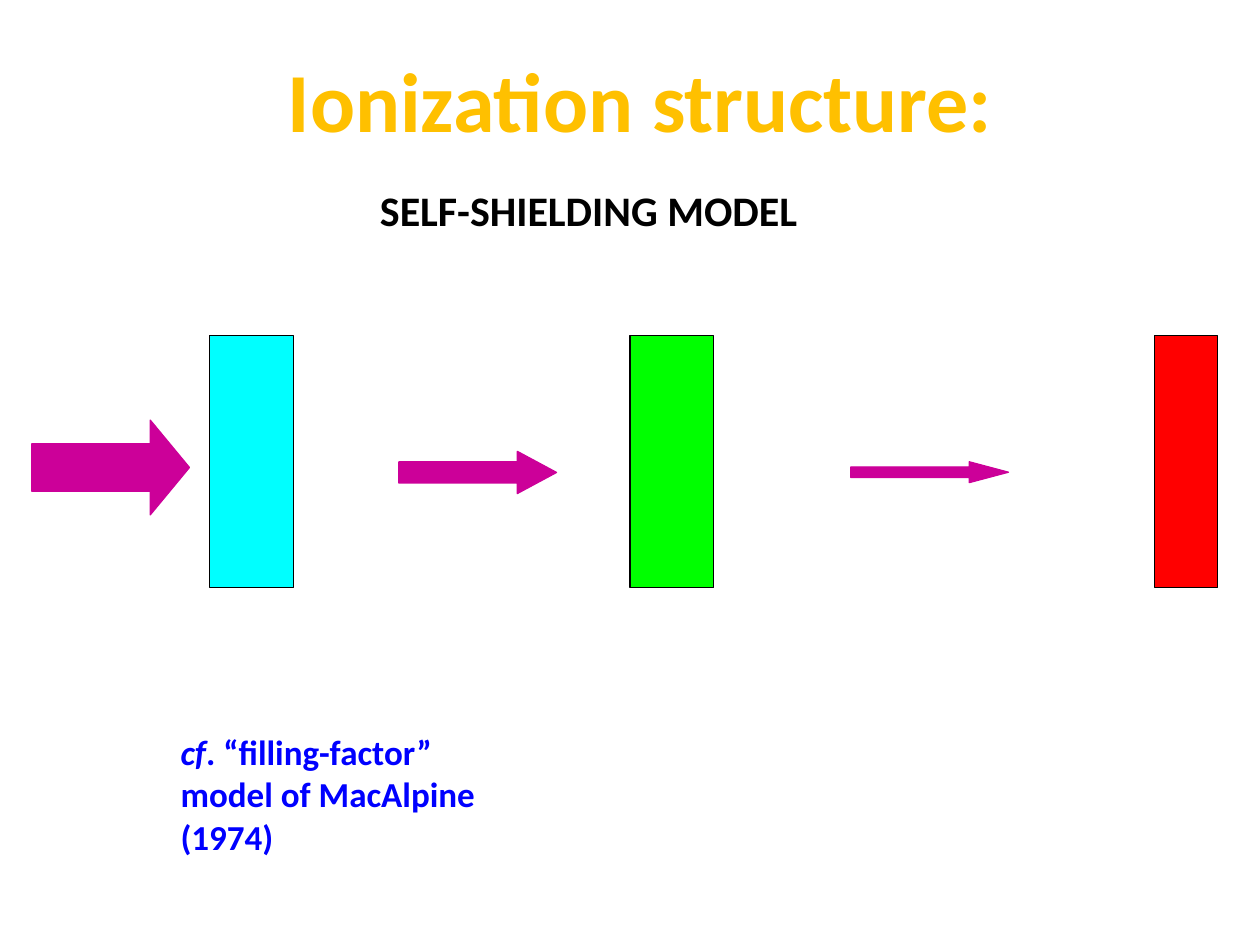
from pptx import Presentation
from pptx.dml.color import RGBColor
from pptx.enum.shapes import MSO_SHAPE
from pptx.enum.text import MSO_ANCHOR, PP_ALIGN
from pptx.util import Cm, Pt

BLACK = RGBColor(0x00, 0x00, 0x00)
BLUE = RGBColor(0x00, 0x00, 0xFF)
GOLD = RGBColor(0xFF, 0xC0, 0x00)
CYAN = RGBColor(0x00, 0xFF, 0xFF)
GREEN = RGBColor(0x00, 0xFF, 0x00)
RED = RGBColor(0xFF, 0x00, 0x00)
MAGENTA = RGBColor(0xCC, 0x00, 0x99)

SLAB_TOP, SLAB_HEIGHT = 6.77, 5.08
ARROW_LENGTH, ARROW_HEAD = 3.18, 0.79


class SlideBuilder:
    font_name = "Calibri"
    line_width = Pt(0.75)

    def __init__(self, slide):
        self.slide = slide

    def format_runs(self, paragraph, size, color):
        for run in paragraph.runs:
            run.font.name = self.font_name
            run.font.size = Pt(size)
            run.font.bold = True
            run.font.color.rgb = color

    def title(self, text, left, top, width, height):
        title = self.slide.shapes.title
        title.left, title.top = Cm(left), Cm(top)
        title.width, title.height = Cm(width), Cm(height)
        frame = title.text_frame
        frame.text = text
        frame.vertical_anchor = MSO_ANCHOR.TOP
        paragraph = frame.paragraphs[0]
        paragraph.alignment = PP_ALIGN.CENTER
        paragraph.line_spacing = 1.0
        self.format_runs(paragraph, 48, GOLD)

    def label(self, text, left, top, width, height, size, color, italic_lead=""):
        """Add a text box, with an optional italic opening before the text."""
        box = self.slide.shapes.add_textbox(Cm(left), Cm(top), Cm(width), Cm(height))
        box.text_frame.word_wrap = True
        paragraph = box.text_frame.paragraphs[0]
        if italic_lead:
            lead = paragraph.add_run()
            lead.text = italic_lead
            lead.font.italic = True
        paragraph.add_run().text = text
        self.format_runs(paragraph, size, color)

    def block(self, preset, left, top, width, height, fill, line):
        shape = self.slide.shapes.add_shape(
            preset, Cm(left), Cm(top), Cm(width), Cm(height))
        shape.shadow.inherit = False
        shape.fill.solid()
        shape.fill.fore_color.rgb = fill
        shape.line.color.rgb = line
        shape.line.width = self.line_width
        return shape

    def slab(self, left, width, fill):
        self.block(MSO_SHAPE.RECTANGLE, left, SLAB_TOP, width, SLAB_HEIGHT,
                   fill, BLACK)

    def radiation_arrow(self, left, top, height):
        """Add an arrow whose head keeps its length whatever the arrow's height."""
        arrow = self.block(MSO_SHAPE.RIGHT_ARROW, left, top, ARROW_LENGTH, height,
                           MAGENTA, MAGENTA)
        arrow.adjustments[0] = 0.5
        arrow.adjustments[1] = ARROW_HEAD / height


def main():
    presentation = Presentation()
    presentation.slide_width, presentation.slide_height = Cm(25.4), Cm(19.05)
    title_only = presentation.slide_layouts[5]
    builder = SlideBuilder(presentation.slides.add_slide(title_only))

    builder.title("Ionization structure:", 1.27, 0.85, 23.28, 2.31)
    builder.label("SELF-SHIELDING MODEL", 7.41, 3.6, 11.43, 1.27, 24, BLACK)

    for left, width, fill in ((4.23, 1.69, CYAN), (12.7, 1.69, GREEN),
                              (23.28, 1.27, RED)):
        builder.slab(left, width, fill)

    for left, top, height in ((0.64, 8.47, 1.91), (8.04, 9.1, 0.85),
                              (17.15, 9.31, 0.42)):
        builder.radiation_arrow(left, top, height)

    builder.label(". “filling-factor” model of MacAlpine (1974)",
                  3.39, 14.61, 7.41, 2.79, 20, BLUE, italic_lead="cf")

    presentation.save("out.pptx")


if __name__ == "__main__":
    main()
